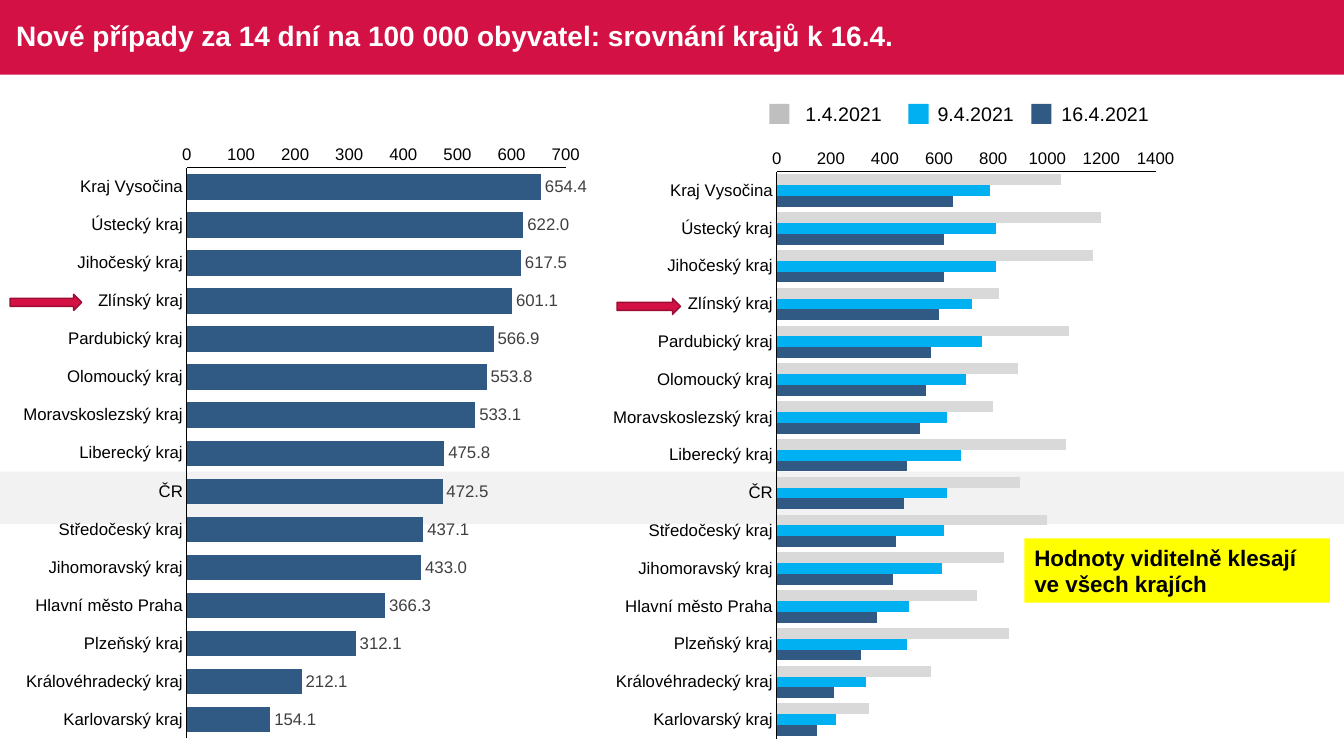
import pptx
import pptx.chart.data
import pptx.dml.color
import pptx.enum.chart
import pptx.enum.shapes
import pptx.enum.text
import pptx.oxml
import pptx.oxml.ns
import pptx.util

RED, NAVY, BLUE = "D31145", "305983", "00B0F0"
BLACK, WHITE = "000000", "FFFFFF"
RECT = pptx.enum.shapes.MSO_SHAPE.RECTANGLE
ARROW = pptx.enum.shapes.MSO_SHAPE.RIGHT_ARROW
LEFT = pptx.enum.text.PP_ALIGN.LEFT
MIDDLE = pptx.enum.text.MSO_ANCHOR.MIDDLE

REGIONS = [
    "Kraj Vysočina", "Ústecký kraj", "Jihočeský kraj", "Zlínský kraj",
    "Pardubický kraj", "Olomoucký kraj", "Moravskoslezský kraj",
    "Liberecký kraj", "ČR", "Středočeský kraj", "Jihomoravský kraj",
    "Hlavní město Praha", "Plzeňský kraj", "Královéhradecký kraj",
    "Karlovarský kraj",
]
LATEST = [654.4, 622.0, 617.5, 601.1, 566.9, 553.8, 533.1, 475.8, 472.5,
          437.1, 433.0, 366.3, 312.1, 212.1, 154.1]
TREND = [
    ("1.4.2021", "D9D9D9", [1050, 1200, 1170, 820, 1080, 890, 800, 1070, 900,
                            1000, 840, 740, 860, 570, 340]),
    ("9.4.2021", BLUE, [790, 810, 810, 720, 760, 700, 630, 680, 630, 620,
                        610, 490, 480, 330, 220]),
    ("16.4.2021", NAVY, [650, 620, 620, 600, 570, 550, 530, 480, 470, 440,
                         430, 370, 310, 210, 150]),
]
# Date, colour, left of the key, left and width of the text
LEGEND = [
    ("1.4.2021", "BFBFBF", 57.24, 59.19, 7.2),
    ("9.4.2021", BLUE, 67.59, 69.02, 7.2),
    ("16.4.2021", NAVY, 76.74, 78.24, 8.03),
]
PLOT = {"x": 0.3, "y": 0.055, "w": 0.65, "h": 0.925}


def color(code):
    return pptx.dml.color.RGBColor.from_string(code)


class Board:
    """Draws on one slide; boxes are left, top, width, height in percent."""

    face = "Arial"

    def __init__(self, deck):
        self.wide, self.high = deck.slide_width, deck.slide_height
        self.slide = deck.slides.add_slide(deck.slide_layouts[5])
        self.shapes = self.slide.shapes

    def place(self, box):
        sides = (self.wide, self.high) * 2
        return [round(side * part / 100) for side, part in zip(sides, box)]

    def style(self, font, size, tint, bold=False):
        font.name, font.size, font.bold = self.face, pptx.util.Pt(size), bold
        font.color.rgb = color(tint)

    def text(self, frame, words, size, tint=BLACK, bold=False):
        line = frame.paragraphs[0]
        line.alignment = LEFT
        run = line.add_run()
        run.text = words
        self.style(run.font, size, tint, bold)
        return line

    def title(self, box, words):
        """Fill the title placeholder and bring it in front of the banner."""
        title = self.shapes.title
        title.left, title.top, title.width, title.height = self.place(box)
        frame = title.text_frame
        frame.auto_size = pptx.enum.text.MSO_AUTO_SIZE.NONE
        frame.vertical_anchor = MIDDLE
        self.text(frame, words, 20, WHITE, True).line_spacing = 0.9
        title.element.getparent().append(title.element)

    def block(self, kind, box, fill, edge=None):
        shape = self.shapes.add_shape(kind, *self.place(box))
        shape.shadow.inherit = False
        shape.fill.solid()
        shape.fill.fore_color.rgb = color(fill)
        if edge:
            shape.line.color.rgb = color(edge)
            shape.line.width = pptx.util.Pt(1)
        else:
            shape.line.fill.background()
        return shape

    def note(self, box, fill, words):
        frame = self.block(RECT, box, fill).text_frame
        frame.word_wrap = True
        frame.vertical_anchor = MIDDLE
        self.text(frame, words, 16, bold=True)

    def label(self, box, words):
        frame = self.shapes.add_textbox(*self.place(box)).text_frame
        frame.word_wrap = False
        self.text(frame, words, 14)

    def axis(self, axis):
        axis.has_major_gridlines = False
        axis.major_tick_mark = pptx.enum.chart.XL_TICK_MARK.NONE
        axis.minor_tick_mark = pptx.enum.chart.XL_TICK_MARK.NONE
        self.style(axis.tick_labels.font, 12, BLACK)
        axis.format.line.color.rgb = color(BLACK)
        axis.format.line.width = pptx.util.Pt(0.75)

    def chart(self, box, rows, top, step, form=None):
        """Add a bar chart; a number format turns value labels on."""
        data = pptx.chart.data.CategoryChartData()
        data.categories = REGIONS
        for name, _, values in rows:
            data.add_series(name, values)
        kind = pptx.enum.chart.XL_CHART_TYPE.BAR_CLUSTERED
        chart = self.shapes.add_chart(kind, *self.place(box), data).chart
        chart.has_legend = chart.has_title = False
        self.style(chart.font, 10, BLACK)
        self.axis(chart.category_axis)
        self.axis(chart.value_axis)
        chart.category_axis.reverse_order = True
        scale = chart.value_axis
        scale.minimum_scale, scale.maximum_scale = 0, top
        scale.major_unit = step
        plot = chart.plots[0]
        plot.vary_by_categories = False
        plot.gap_width, plot.overlap = 50, 0
        for series, (_, tint, _) in zip(plot.series, rows):
            series.invert_if_negative = False
            series.format.fill.solid()
            series.format.fill.fore_color.rgb = color(tint)
        if form:
            plot.has_data_labels = True
            marks = plot.data_labels
            marks.show_value = True
            marks.number_format, marks.number_format_is_linked = form, False
            marks.position = pptx.enum.chart.XL_LABEL_POSITION.OUTSIDE_END
            self.style(marks.font, 12, "404040")
        self.fix(chart)

    def fix(self, chart):
        """Pin the inner plot area to the shares in PLOT."""
        name = pptx.oxml.ns.qn
        area = chart.element.find(".//" + name("c:plotArea"))
        for old in area.findall(name("c:layout")):
            area.remove(old)
        modes = "".join(f'<c:{key}Mode val="edge"/>' for key in "xy")
        sizes = "".join(f'<c:{k} val="{v}"/>' for k, v in PLOT.items())
        area.insert(0, pptx.oxml.parse_xml(
            f'<c:layout {pptx.oxml.ns.nsdecls("c")}><c:manualLayout>'
            f'<c:layoutTarget val="inner"/>{modes}{sizes}'
            '</c:manualLayout></c:layout>'))


def main():
    deck = pptx.Presentation()
    deck.slide_width = pptx.util.Inches(13.33)
    deck.slide_height = pptx.util.Inches(7.5)
    board = Board(deck)
    board.block(RECT, (0, 0, 100, 9.87), RED)
    board.block(RECT, (0, 62.4, 100, 6.93), "F2F2F2")
    board.title((0.45, 0, 90.1, 9.87),
                "Nové případy za 14 dní na 100 000 obyvatel: "
                "srovnání krajů k 16.4.")
    for date, tint, key, left, width in LEGEND:
        board.block(RECT, (key, 13.73, 1.5, 2.67), tint)
        board.label((left, 12.8, width, 4.53), date)
    board.chart((44.79, 18.27, 43.36, 81.07), TREND, 1400, 200)
    board.chart((0.9, 17.73, 43.36, 81.6), [("16.4.2021", NAVY, LATEST)],
                700, 100, "#,##0.0")
    board.note((76.22, 71.2, 22.73, 8.53), "FFFF00",
               "Hodnoty viditelně klesají ve všech krajích")
    for left, top, width in [(45.91, 39.47, 4.73), (0.75, 38.93, 5.33)]:
        board.block(ARROW, (left, top, width, 2.13), RED, "9C0D33")
    deck.save("out.pptx")


if __name__ == "__main__":
    main()
